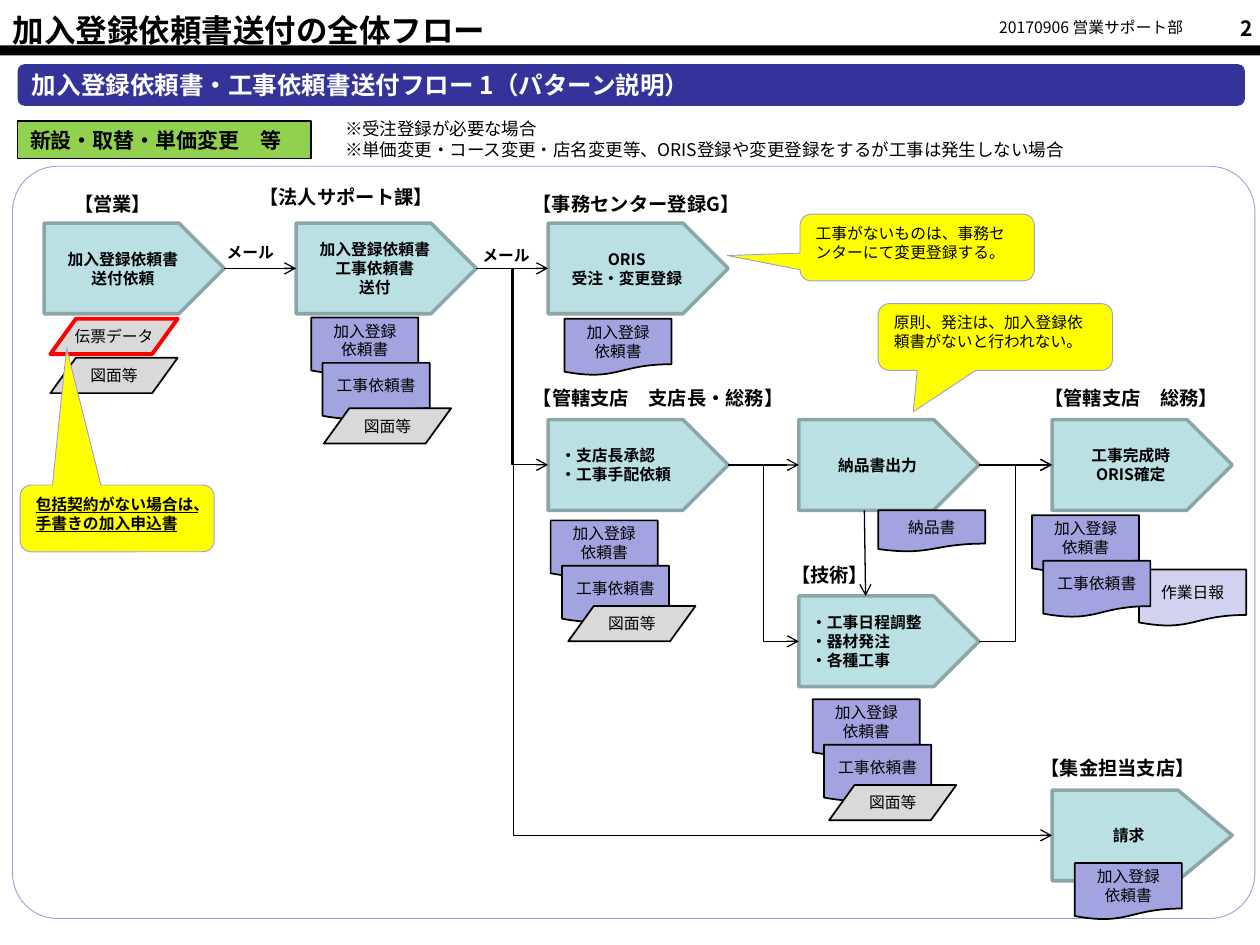
from lxml import etree
from pptx import Presentation
from pptx import util as u
from pptx.dml.color import RGBColor
from pptx.enum import shapes, text
from pptx.oxml import ns

BLACK = RGBColor(0x00, 0x00, 0x00)
WHITE = RGBColor(0xFF, 0xFF, 0xFF)
NAVY = RGBColor(0x33, 0x33, 0x99)
GREEN = RGBColor(0x92, 0xD0, 0x50)
TEAL = RGBColor(0xBB, 0xE0, 0xE3)
TEAL_EDGE = RGBColor(0x8A, 0xA6, 0xA8)
VIOLET = RGBColor(0xA3, 0xA3, 0xE0)
PALE_VIOLET = RGBColor(0xD1, 0xD1, 0xF0)
VIOLET_EDGE = RGBColor(0x9C, 0x9C, 0xDF)
GREY = RGBColor(0xD9, 0xD9, 0xD9)
RED = RGBColor(0xFF, 0x00, 0x00)
YELLOW = RGBColor(0xFF, 0xFF, 0x00)
FONT = "Noto Sans CJK JP"
KIND = shapes.MSO_SHAPE
LEFT, CENTER, RIGHT = text.PP_ALIGN.LEFT, text.PP_ALIGN.CENTER, text.PP_ALIGN.RIGHT
TOP, MIDDLE = text.MSO_ANCHOR.TOP, text.MSO_ANCHOR.MIDDLE

deck = Presentation()
deck.slide_width, deck.slide_height = u.Inches(10), u.Inches(7.5)
page = deck.slides.add_slide(deck.slide_layouts[5])
# The page is a grid of 100 columns and 75 rows.
COL = deck.slide_width / 100
ROW = deck.slide_height / 75


def write(box, words, size, align=LEFT, anchor=TOP, wrap=True, color=BLACK, **font):
    frame = box.text_frame
    for name, value in dict(text=words, word_wrap=wrap, vertical_anchor=anchor,
                            auto_size=text.MSO_AUTO_SIZE.NONE).items():
        setattr(frame, name, value)
    for para in frame.paragraphs:
        for name, value in dict(alignment=align, line_spacing=u.Pt(size * 1.2),
                                space_before=u.Pt(0)).items():
            setattr(para, name, value)
        for span in para.runs:
            for name, value in dict(name=FONT, size=u.Pt(size), **font).items():
                setattr(span.font, name, value)
            span.font.color.rgb = color
            east = etree.SubElement(span.font._element, ns.qn("a:ea"))
            east.set("typeface", FONT)


def draw(kind, col, row, cols, rows, fill=None, edge=None, width=1, adjust=()):
    """Place a preset shape, or a text box when kind is None; lengths in grid cells."""
    place = [int(n) for n in (col * COL, row * ROW, cols * COL, rows * ROW)]
    if kind is None:
        return page.shapes.add_textbox(*place)
    box = page.shapes.add_shape(kind, *place)
    box.shadow.inherit = False
    for paint, color in ((box.fill, fill), (box.line.fill, edge)):
        if color is None:
            paint.background()
        else:
            paint.solid()
            paint.fore_color.rgb = color
    if edge is not None:
        box.line.width = u.Pt(width)
    for index, value in enumerate(adjust):
        box.adjustments[index] = value
    return box


# Header
title = page.shapes.title
for name, value in dict(left=0, top=int(0.4 * ROW), width=int(57.9 * COL),
                        height=int(4 * ROW)).items():
    setattr(title, name, value)
write(title, "加入登録依頼書送付の全体フロー", 18, bold=True)
draw(KIND.RECTANGLE, 0, 3.6, 100, 0.8, BLACK)
write(draw(None, 77.6, 0.9, 18, 2.5), "20170906 営業サポート部", 9, CENTER, wrap=False)
write(draw(None, 95, 0.7, 5.4, 2.9), "2", 12, RIGHT, bold=True)
band = draw(KIND.ROUNDED_RECTANGLE, 1.4, 5.1, 97.4, 3.3, NAVY)
write(band, "加入登録依頼書・工事依頼書送付フロー 1（パターン説明）", 14, anchor=MIDDLE,
      color=WHITE, bold=True)
case = draw(KIND.RECTANGLE, 1.4, 9.6, 23.3, 3, GREEN, BLACK, 0.75)
write(case, "新設・取替・単価変更　等", 12, bold=True)
write(draw(None, 26.4, 8.9, 67.4, 4.4),
      "※受注登録が必要な場合\n"
      "※単価変更・コース変更・店名変更等、ORIS登録や変更登録をするが工事は発生しない場合", 10)
draw(KIND.ROUNDED_RECTANGLE, 1, 13.2, 98.6, 59.7, None, VIOLET_EDGE, 0.5, [0.06])

# Process steps: column, row, alignment, words
STEP_COLS, STEP_ROWS = 14.3, 7.2
lanes = [3.5, 23.5, 43.5, 63.4, 83.5]
levels = [17.7, 33.3, 47.3, 62.7]
steps = {}
for name, lane, level, align, words in [
    ("request", 0, 0, CENTER, "加入登録依頼書\n送付依頼"),
    ("send", 1, 0, CENTER, "加入登録依頼書\n工事依頼書\n送付"),
    ("register", 2, 0, CENTER, "ORIS\v受注・変更登録"),
    ("approve", 2, 1, LEFT, "・支店長承認\n・工事手配依頼"),
    ("deliver", 3, 1, CENTER, "納品書出力"),
    ("confirm", 4, 1, CENTER, "工事完成時\nORIS確定"),
    ("install", 3, 2, LEFT, "・工事日程調整\n・器材発注\n・各種工事"),
    ("bill", 4, 3, CENTER, "請求"),
]:
    adjust = [0.6] if name == "bill" else []
    steps[name] = draw(KIND.PENTAGON, lanes[lane], levels[level], STEP_COLS, STEP_ROWS,
                       TEAL, TEAL_EDGE, 2, adjust)
    write(steps[name], words, 9, align, MIDDLE, bold=True)

# Department and mail labels
for col, row, cols, size, words in [
    (4.9, 14.8, 9.6, 11, "【営業】"),
    (19.6, 14.2, 19.4, 11, "【法人サポート課】"),
    (41.3, 14.8, 23, 11, "【事務センター登録G】"),
    (41.3, 30.2, 22.1, 11, "【管轄支店　支店長・総務】"),
    (81.9, 30.2, 16.8, 11, "【管轄支店　総務】"),
    (61.8, 44.2, 11.5, 11, "【技術】"),
    (81.6, 59.5, 15, 11, "【集金担当支店】"),
    (17, 18.8, 7.7, 9, "メール"),
    (37.3, 19, 7.7, 9, "メール"),
]:
    write(draw(None, col, row, cols, 2.9), words, size, bold=True)

# Arrows run from the tip of one step to the back of the next
STRAIGHT, ELBOW = shapes.MSO_CONNECTOR.STRAIGHT, shapes.MSO_CONNECTOR.ELBOW
arrows = []
for kind, start, end in [
    (STRAIGHT, "request", "send"), (STRAIGHT, "send", "register"),
    (ELBOW, "send", "approve"), (ELBOW, "send", "bill"),
    (STRAIGHT, "approve", "deliver"), (ELBOW, "approve", "install"),
    (STRAIGHT, "deliver", "confirm"), (ELBOW, "install", "confirm"),
]:
    first, last = steps[start], steps[end]
    arrow = page.shapes.add_connector(
        kind, first.left + first.width, first.top + first.height // 2,
        last.left, last.top + last.height // 2)
    arrow.begin_connect(first, 3)
    arrow.end_connect(last, 1)
    if (start, end) == ("send", "bill"):
        bends = arrow._element.spPr.find(ns.qn("a:prstGeom")).get_or_add_avLst()
        etree.SubElement(bends, ns.qn("a:gd"), name="adj1", fmla="val 6500")
    arrows.append(arrow)
arrows.append(page.shapes.add_connector(
    STRAIGHT, int(68.6 * COL), int(40.5 * ROW), int(68.7 * COL), int(47.3 * ROW)))
for arrow in arrows:
    arrow.line.color.rgb = BLACK
    arrow.line.width = u.Pt(0.75)
    etree.SubElement(arrow.line._get_or_add_ln(), ns.qn("a:tailEnd"), type="arrow")
    etree.SubElement(arrow._element.spPr, ns.qn("a:effectLst"))

# Papers: a stack holds an entry form, a work order and drawings
ENTRY, ORDER, DRAWINGS = "加入登録\v依頼書", "工事依頼書", "図面等"
papers = [(4, 25.3, "伝票データ"), (4, 28.4, DRAWINGS), (44.8, 25.3, ENTRY),
          (85.3, 68.5, ENTRY), (90.4, 45.2, "作業日報"), (69.7, 40.5, "納品書")]
for col, row, gap_col, gap_row in [(24.7, 25.2, 1, 7.2), (43.7, 41.3, 1.4, 6.8),
                                   (64.5, 55.5, 1.3, 6.8), (81.9, 40.9, None, None)]:
    papers += [(col, row, ENTRY), (col + 0.9, row + 3.6, ORDER)]
    if gap_col:
        papers.append((col + gap_col, row + gap_row, DRAWINGS))
for col, row, words in papers:
    if words in ("伝票データ", DRAWINGS):
        edge, width = (BLACK, 1) if words == DRAWINGS else (RED, 2.25)
        paper = draw(KIND.FLOWCHART_DATA, col, row, 10.1, 2.8, GREY, edge, width)
    else:
        rows = 3.3 if words == "納品書" else 4.5
        fill = PALE_VIOLET if words == "作業日報" else VIOLET
        paper = draw(KIND.FLOWCHART_DOCUMENT, col, row, 8.5, rows, fill, BLACK)
    write(paper, words, 9, CENTER, MIDDLE, wrap=False)

# Callouts: the adjustments place the pointer tip
for col, row, cols, tip, font, words in [
    (63.5, 17, 18.6, (-0.81, 0.12), {}, "工事がないものは、事務センターにて変更登録する。"),
    (69.7, 24.1, 18.6, (-0.35, 1.12), {}, "原則、発注は、加入登録依頼書がないと行われない。"),
    (1.6, 38.5, 15.4, (-0.26, -2.55), dict(bold=True, underline=True),
     "包括契約がない場合は、手書きの加入申込書"),
]:
    callout = draw(KIND.ROUNDED_RECTANGULAR_CALLOUT, col, row, cols, 5.3,
                   YELLOW, VIOLET_EDGE, 0.5, tip)
    write(callout, words, 9, **font)

deck.save("out.pptx")
